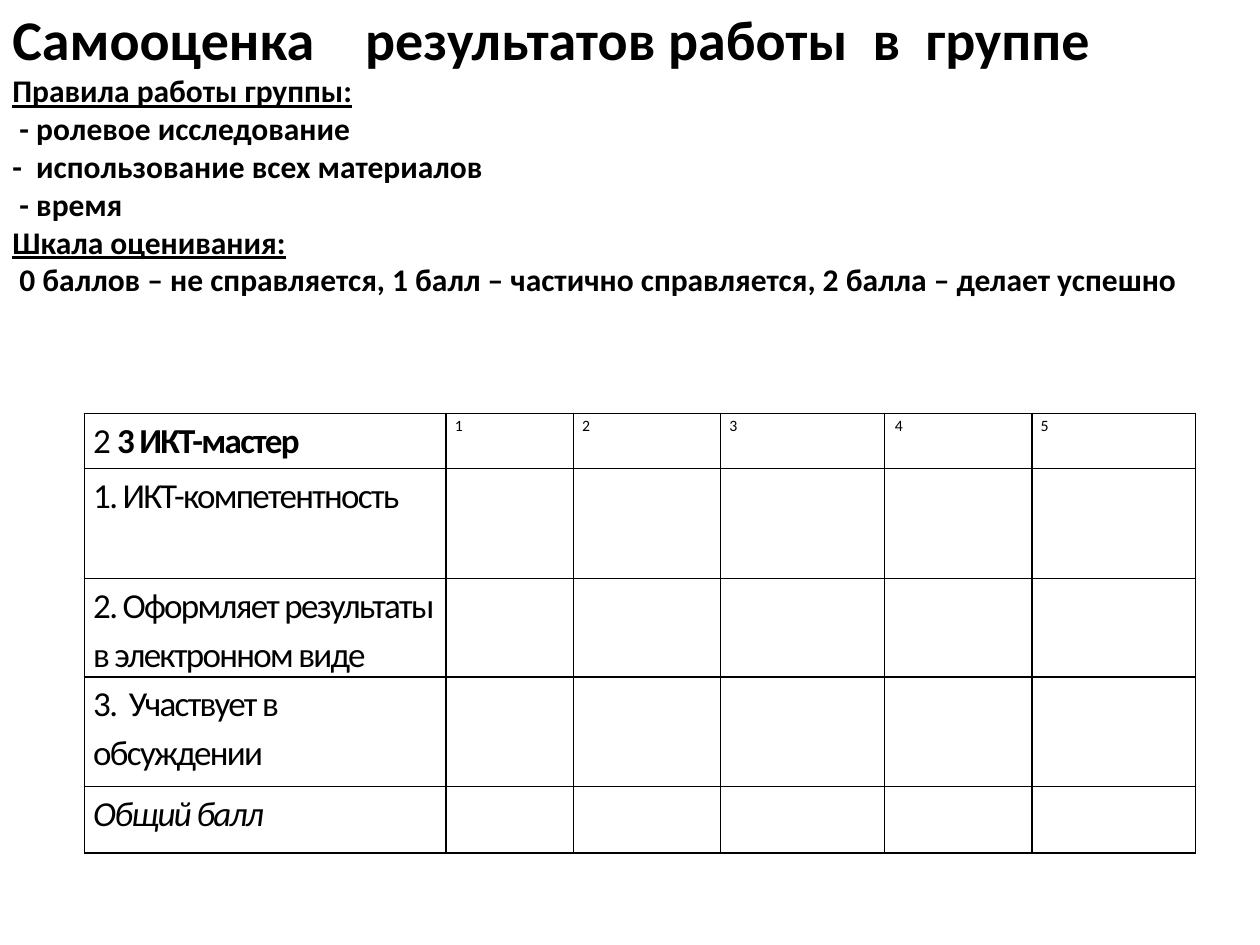
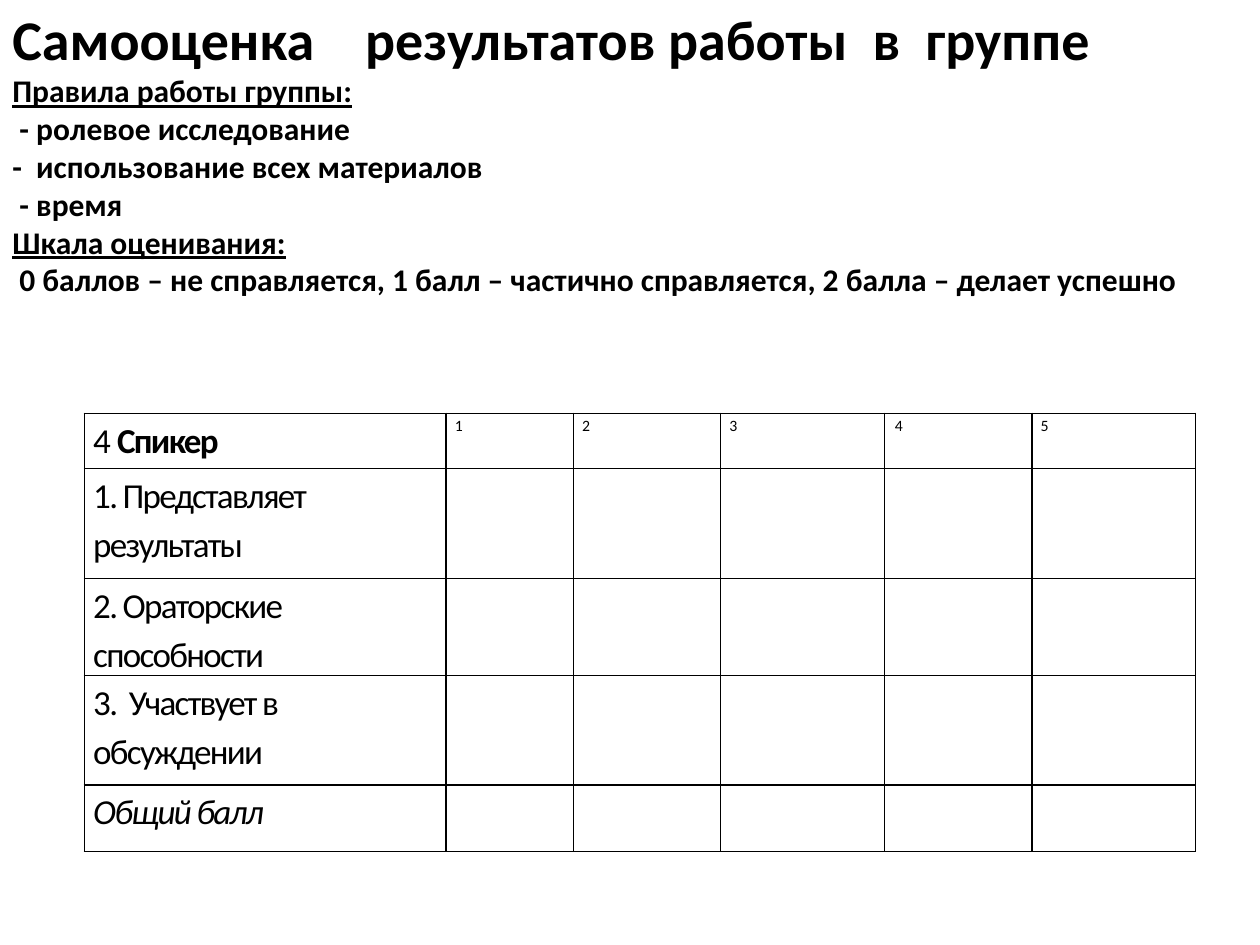
import pptx
import pptx.util
import pptx.dml.color
import pptx.enum.text
import pptx.oxml
import pptx.oxml.ns
import lxml.etree

BLACK = pptx.dml.color.RGBColor(0, 0, 0)
WHITE = pptx.dml.color.RGBColor(255, 255, 255)
FONT = "Calibri"
WIDE = pptx.util.Inches(10)
HIGH = pptx.util.Inches(7.5)
COLS = [28.7, 10.1, 11.7, 13, 11.7, 13]
ROWS = [5.87, 11.6, 10.27, 11.6, 7.07]
MARKS = ["1", "2", "3", " 4", "5"]
TITLE = "Самооценка\tрезультатов работы  в  группе"
RULES = [
    ("Правила работы группы:", True),
    (" - ролевое исследование", False),
    ("-  использование всех материалов", False),
    (" - время", False),
    ("Шкала оценивания:", True),
    (" 0 баллов – не справляется, 1 балл – частично справляется, "
     "2 балла – делает успешно", False),
]
TALK = "3.  Участвует в обсуждении"
TOTAL = "Общий балл"
ROLES = [
    ("2 ", "3 ИКТ-мастер",
     ["1. ИКТ-компетентность", "2. Оформляет результаты в электронном виде"]),
    ("4 ", "Спикер",
     ["1. Представляет результаты", "2. Ораторские способности"]),
]


def across(share):
    """Return a percentage of the slide's width."""
    return int(WIDE * share / 100)


def down(share):
    """Return a percentage of the slide's height."""
    return int(HIGH * share / 100)


def style(para, size, bold=False):
    """Set the shared font of a paragraph."""
    font = para.font
    font.name, font.size, font.bold = FONT, pptx.util.Pt(size), bold
    font.color.rgb = BLACK


def add_stop(para, place):
    """Put one left tab stop in a paragraph."""
    props = para._p.get_or_add_pPr()
    stops = pptx.oxml.parse_xml(
        f'<a:tabLst {pptx.oxml.ns.nsdecls("a")}>'
        f'<a:tab pos="{place}" algn="l"/></a:tabLst>')
    props.insert(0, stops)


def add_head(slide):
    """Add the title, the group rules and the scale."""
    box = slide.shapes.add_textbox(0, down(-0.4), WIDE, down(32.8))
    frame = box.text_frame
    frame.word_wrap = True
    frame.vertical_anchor = pptx.enum.text.MSO_ANCHOR.MIDDLE
    title = frame.paragraphs[0]
    title.add_run().text = TITLE
    style(title, 32, True)
    add_stop(title, across(28))
    for text, under in RULES:
        para = frame.add_paragraph()
        para.add_run().text = text
        style(para, 18, True)
        para.font.underline = under


def frame_cell(cell):
    """Give a cell thin black borders, no fill and narrow margins."""
    cell.fill.background()
    cell.margin_left = cell.margin_right = pptx.util.Inches(0.07)
    cell.margin_top = cell.margin_bottom = 0
    props = cell._tc.get_or_add_tcPr()
    for spot, side in enumerate("LRTB"):
        line = pptx.oxml.parse_xml(
            f'<a:ln{side} {pptx.oxml.ns.nsdecls("a")} w="12700">'
            f'<a:solidFill><a:srgbClr val="{BLACK}"/></a:solidFill>'
            f'</a:ln{side}>')
        props.insert(spot, line)


def fill_cell(cell, parts, size=20):
    """Write the runs of a cell and return its paragraph."""
    para = cell.text_frame.paragraphs[0]
    para.line_spacing = 1.15
    for part in parts:
        run = para.add_run()
        run.text = part
        run._r.get_or_add_rPr().set("spc", "-100")
    style(para, size)
    return para


def add_grid(slide, code, role, tasks):
    """Add the score table of one role."""
    shape = slide.shapes.add_table(
        len(ROWS), len(COLS), across(6.7), down(43.73),
        across(sum(COLS)), down(sum(ROWS)))
    table = shape.table
    table.first_row = table.horz_banding = False
    for col, share in zip(table.columns, COLS):
        col.width = across(share)
    for row, share in zip(table.rows, ROWS):
        row.height = down(share)
    for cell in table.iter_cells():
        frame_cell(cell)
    head = fill_cell(table.cell(0, 0), [code, role])
    head.runs[1].font.bold = True
    for col, mark in enumerate(MARKS, 1):
        fill_cell(table.cell(0, col), [mark], 9)
    for row, text in enumerate([*tasks, TALK, TOTAL], 1):
        para = fill_cell(table.cell(row, 0), [text])
        para.font.italic = text == TOTAL


def main():
    """Build one slide for each role."""
    deck = pptx.Presentation()
    deck.slide_width, deck.slide_height = WIDE, HIGH
    for role in ROLES:
        slide = deck.slides.add_slide(deck.slide_layouts[6])
        slide.background.fill.solid()
        slide.background.fill.fore_color.rgb = WHITE
        add_grid(slide, *role)
        add_head(slide)
    deck.save("out.pptx")


if __name__ == "__main__":
    main()
